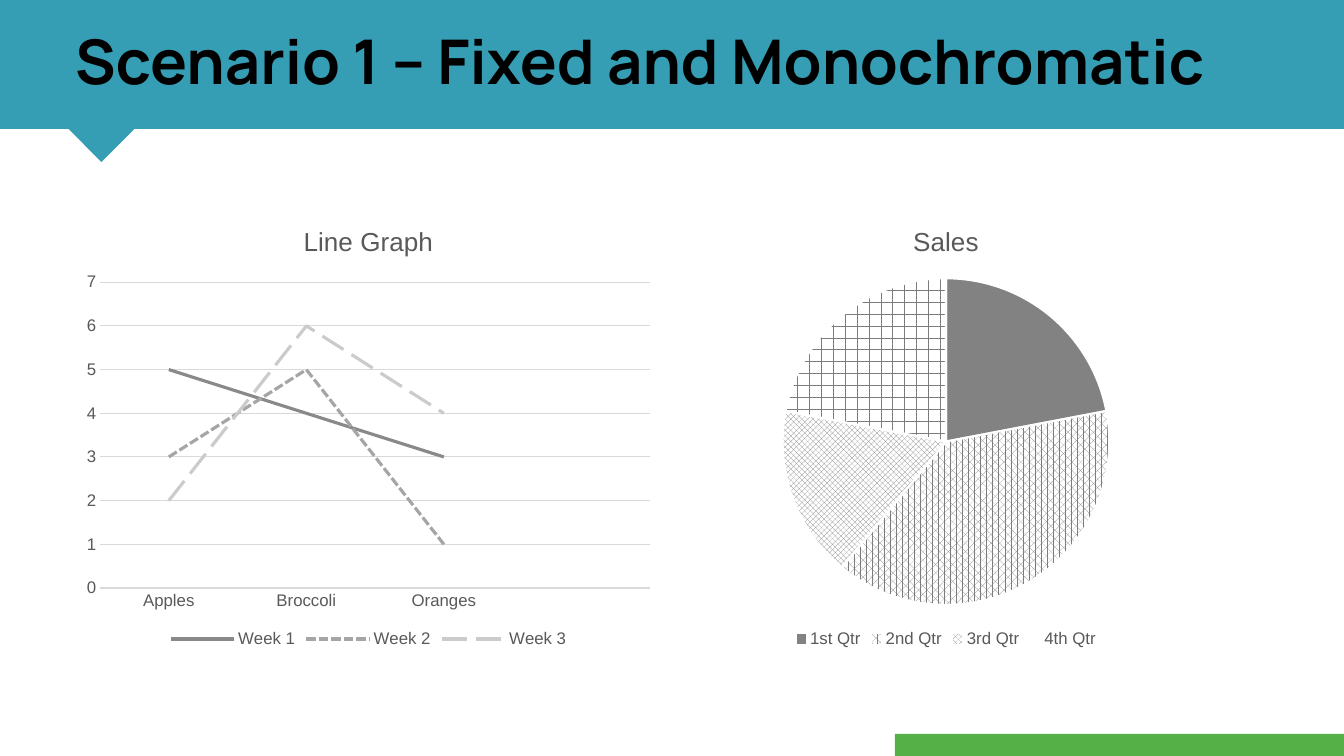
"""Build a slide with a grey line chart and a patterned pie chart."""
from dataclasses import dataclass

from pptx import Presentation
from pptx.chart.chart import Chart
from pptx.chart.data import CategoryChartData as Data
from pptx.dml.color import RGBColor as Rgb
from pptx.enum.chart import XL_CHART_TYPE as Kind
from pptx.enum.chart import XL_LEGEND_POSITION as Spot
from pptx.enum.chart import XL_TICK_MARK as Tick
from pptx.enum.dml import MSO_LINE as Dash
from pptx.enum.dml import MSO_PATTERN as Weave
from pptx.enum.shapes import MSO_SHAPE as Form
from pptx.enum.text import MSO_ANCHOR as Anchor
from pptx.enum.text import MSO_AUTO_SIZE as Fit
from pptx.enum.text import PP_ALIGN as Align
from pptx.slide import Slide
from pptx.util import Inches, Pt

SCALE = Inches(7.5) / 756


@dataclass(frozen=True)
class Theme:
    teal: Rgb = Rgb(0x35, 0x9E, 0xB5)
    green: Rgb = Rgb(0x55, 0xB0, 0x47)
    black: Rgb = Rgb(0, 0, 0)
    white: Rgb = Rgb(255, 255, 255)
    label: Rgb = Rgb(0x59, 0x59, 0x59)
    grid: Rgb = Rgb(0xD9, 0xD9, 0xD9)
    slice: Rgb = Rgb(0x82, 0x82, 0x82)
    weave: Rgb = Rgb(0x7C, 0x7C, 0x7C)
    head: str = "Manrope"
    body: str = "Arial"
    title: float = 44
    name: float = 18.6
    small: float = 12


@dataclass(frozen=True)
class Box:
    left: int
    top: int
    width: int
    height: int

    def emu(self) -> tuple[int, ...]:
        sides = (self.left, self.top, self.width, self.height)
        return tuple(round(side * SCALE) for side in sides)


@dataclass(frozen=True)
class Block:
    form: Form
    box: Box
    color: Rgb


@dataclass(frozen=True)
class Week:
    name: str
    counts: tuple[int | None, ...]
    color: Rgb
    dash: Dash


@dataclass(frozen=True)
class Quarter:
    name: str
    sales: int
    weave: Weave | None = None


THEME = Theme()
BLOCKS = (
    Block(Form.FLOWCHART_DECISION, Box(67, 93, 69, 69), THEME.teal),
    Block(Form.RECTANGLE, Box(0, 0, 1344, 129), THEME.teal),
    Block(Form.RECTANGLE, Box(895, 734, 449, 22), THEME.green),
)
FOODS = ("Apples", "Broccoli", "Oranges", "")
WEEKS = (
    Week("Week 1", (5, 4, 3, None), Rgb(0x89, 0x89, 0x89), Dash.SOLID),
    Week("Week 2", (3, 5, 1, None), Rgb(0xA5, 0xA5, 0xA5), Dash.SQUARE_DOT),
    Week("Week 3", (2, 6, 4, None), Rgb(0xCB, 0xCB, 0xCB), Dash.LONG_DASH),
)
QUARTERS = (
    Quarter("1st Qtr", 22),
    Quarter("2nd Qtr", 39, Weave.PERCENT_60),
    Quarter("3rd Qtr", 17, Weave.SOLID_DIAMOND),
    Quarter("4th Qtr", 22, Weave.HORIZONTAL_BRICK),
)


def add_block(slide: Slide, block: Block) -> None:
    shape = slide.shapes.add_shape(block.form, *block.box.emu())
    shape.shadow.inherit = False
    shape.fill.solid()
    shape.fill.fore_color.rgb = block.color
    shape.line.fill.background()


def set_title(slide: Slide, text: str, box: Box) -> None:
    title = slide.shapes.title
    title.left, title.top, title.width, title.height = box.emu()
    frame = title.text_frame
    frame.auto_size = Fit.NONE
    frame.word_wrap = True
    frame.vertical_anchor = Anchor.MIDDLE
    para = frame.paragraphs[0]
    para.alignment = Align.LEFT
    para.line_spacing = 0.9
    run = para.add_run()
    run.text = text
    run.font.name = THEME.head
    run.font.size = Pt(THEME.title)
    run.font.bold = True
    run.font.color.rgb = THEME.black
    slide.shapes._spTree.append(title._element)


def add_chart(slide: Slide, kind: Kind, box: Box, data: Data, name: str) -> Chart:
    chart = slide.shapes.add_chart(kind, *box.emu(), data).chart
    chart.font.name = THEME.body
    chart.font.size = Pt(THEME.small)
    chart.font.color.rgb = THEME.label
    run = chart.chart_title.text_frame.paragraphs[0].add_run()
    run.text = name
    run.font.name = THEME.body
    run.font.size = Pt(THEME.name)
    run.font.bold = False
    run.font.color.rgb = THEME.label
    chart.chart_title.include_in_layout = False
    chart.has_legend = True
    chart.legend.position = Spot.BOTTOM
    chart.legend.include_in_layout = False
    return chart


def add_lines(slide: Slide, box: Box) -> None:
    data = Data()
    data.categories = FOODS
    for week in WEEKS:
        data.add_series(week.name, week.counts)
    chart = add_chart(slide, Kind.LINE, box, data, "Line Graph")
    foods, counts = chart.category_axis, chart.value_axis
    for axis in (foods, counts):
        axis.major_tick_mark = axis.minor_tick_mark = Tick.NONE
    counts.minimum_scale, counts.maximum_scale = 0, 7
    counts.major_unit = 1
    counts.format.line.fill.background()
    for line in (foods.format.line, counts.major_gridlines.format.line):
        line.color.rgb = THEME.grid
        line.width = Pt(0.75)
    chart.plots[0].vary_by_categories = False
    for week, series in zip(WEEKS, chart.plots[0].series):
        series.smooth = False
        line = series.format.line
        line.color.rgb = week.color
        line.width = Pt(2.25)
        line.dash_style = week.dash


def add_pie(slide: Slide, box: Box) -> None:
    data = Data()
    data.categories = [part.name for part in QUARTERS]
    data.add_series("Sales", [part.sales for part in QUARTERS])
    chart = add_chart(slide, Kind.PIE, box, data, "Sales")
    plot = chart.plots[0]
    plot.vary_by_categories = True
    for index, part in enumerate(QUARTERS):
        style = plot.series[0].points[index].format
        if part.weave is None:
            style.fill.solid()
            style.fill.fore_color.rgb = THEME.slice
        else:
            style.fill.patterned()
            style.fill.pattern = part.weave
            style.fill.fore_color.rgb = THEME.weave
            style.fill.back_color.rgb = THEME.white
        style.line.color.rgb = THEME.white
        style.line.width = Pt(1.5)


def main() -> None:
    deck = Presentation()
    deck.slide_width, deck.slide_height = Box(0, 0, 1344, 756).emu()[2:]
    slide = deck.slides.add_slide(deck.slide_layouts[5])
    for block in BLOCKS:
        add_block(slide, block)
    set_title(slide, "Scenario 1 – Fixed and Monochromatic", Box(65, 0, 1250, 129))
    add_lines(slide, Box(75, 205, 587, 447))
    add_pie(slide, Box(672, 205, 548, 447))
    deck.save("out.pptx")


if __name__ == "__main__":
    main()
